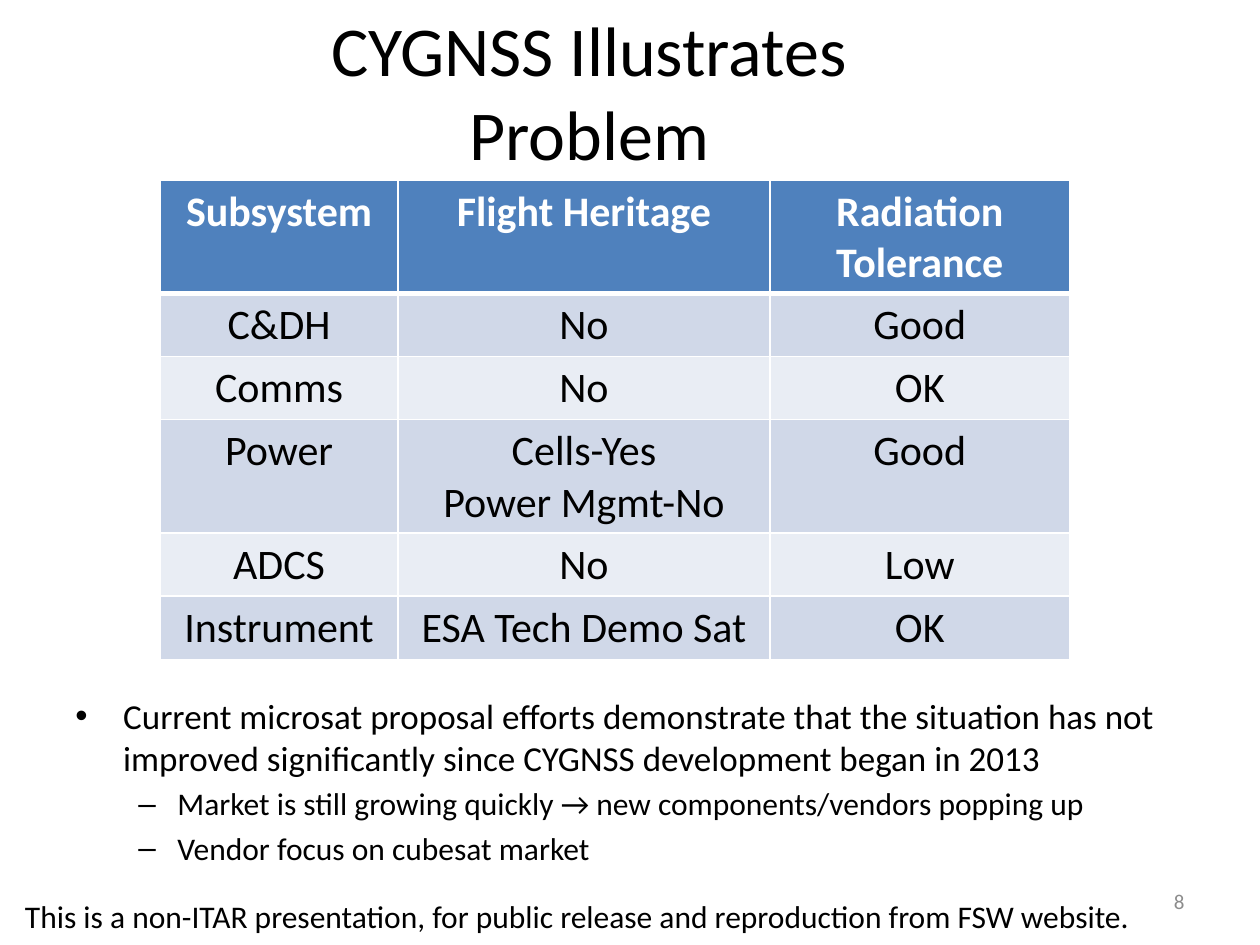
from lxml import etree
from pptx import Presentation
from pptx.dml.color import RGBColor
from pptx.enum.text import MSO_ANCHOR, PP_ALIGN
from pptx.oxml.ns import qn
from pptx.util import Inches, Pt

LEFT, CENTER, RIGHT = PP_ALIGN.LEFT, PP_ALIGN.CENTER, PP_ALIGN.RIGHT
TOP, MIDDLE = MSO_ANCHOR.TOP, MSO_ANCHOR.MIDDLE
BLACK, WHITE, GRAY = "000000", "FFFFFF", "8C8C8C"
HEADER_FILL, BAND_FILLS = "4F81BD", ("E9EDF4", "D0D8E8")

COLUMN_WIDTHS = (1.89, 2.95, 2.38)
ROW_HEIGHT = 0.41
ROWS = [
    ("Subsystem", "Flight Heritage", "Radiation Tolerance"),
    ("C&DH", "No", "Good"),
    ("Comms", "No", "OK"),
    ("Power", "Cells-Yes\nPower Mgmt-No", "Good"),
    ("ADCS", "No", "Low"),
    ("Instrument", "ESA Tech Demo Sat", "OK"),
]
BULLETS = [
    (0, "Current microsat proposal efforts demonstrate that the situation has not "
        "improved significantly since CYGNSS development began in 2013"),
    (1, "Market is still growing quickly → new components/vendors popping up"),
    (1, "Vendor focus on cubesat market"),
]
BULLET_LEVELS = [
    {"char": "•", "size": 20, "margin": 0.38, "hang": 0.38},
    {"char": "–", "size": 18, "margin": 0.81, "hang": 0.31},
]


def rgb(color):
    """Turn a hex string into a colour."""
    return RGBColor.from_string(color)


def write(p, text, size, color=BLACK, align=LEFT, bold=False):
    """Fill a paragraph with one formatted run."""
    p.alignment = align
    r = p.add_run()
    r.text = text
    font = {"name": "Calibri", "size": Pt(size), "bold": bold}
    for name, value in font.items():
        setattr(r.font, name, value)
    r.font.color.rgb = rgb(color)


def add_box(s, box, anchor=TOP):
    """Add a wrapping text box and return its text frame."""
    tf = s.shapes.add_textbox(*map(Inches, box)).text_frame
    tf.word_wrap = True
    tf.vertical_anchor = anchor
    return tf


def add_text(s, box, text, size, color=BLACK, align=LEFT, anchor=TOP):
    """Add a text box with a single paragraph."""
    write(add_box(s, box, anchor).paragraphs[0], text, size, color, align)


def add_bullets(s, box, items):
    """Add a two-level bulleted list."""
    tf = add_box(s, box)
    for i, (level, text) in enumerate(items):
        style = BULLET_LEVELS[level]
        p = tf.add_paragraph() if i else tf.paragraphs[0]
        p.level = level
        p.space_before = Pt(style["size"] * 0.2)
        write(p, text, style["size"])
        pPr = p._p.get_or_add_pPr()
        pPr.set("marL", str(Inches(style["margin"])))
        pPr.set("indent", str(-Inches(style["hang"])))
        etree.SubElement(pPr, qn("a:buFont"), typeface="Arial")
        etree.SubElement(pPr, qn("a:buChar"), char=style["char"])


def set_borders(cell, top, bottom):
    """Draw white borders around a cell, with widths in points."""
    tcPr = cell._tc.get_or_add_tcPr()
    for side, width in (("L", 1), ("R", 1), ("T", top), ("B", bottom)):
        ln = etree.SubElement(tcPr, qn(f"a:ln{side}"), w=str(Pt(width)))
        fill = etree.SubElement(ln, qn("a:solidFill"))
        etree.SubElement(fill, qn("a:srgbClr"), val=WHITE)


def add_subsystem_table(s, box, rows):
    """Add the banded table with a header row."""
    frame = s.shapes.add_table(len(rows), len(COLUMN_WIDTHS), *map(Inches, box))
    table = frame.table
    for column, width in zip(table.columns, COLUMN_WIDTHS):
        column.width = Inches(width)
    for i, texts in enumerate(rows):
        header = i == 0
        table.rows[i].height = Inches(ROW_HEIGHT)
        for j, text in enumerate(texts):
            cell = table.cell(i, j)
            set_borders(cell, 3 if i == 1 else 1, 3 if header else 1)
            cell.fill.solid()
            cell.fill.fore_color.rgb = rgb(HEADER_FILL if header else BAND_FILLS[i % 2])
            tf = cell.text_frame
            for k, line in enumerate(text.split("\n")):
                p = tf.add_paragraph() if k else tf.paragraphs[0]
                write(p, line, 24, WHITE if header else BLACK, CENTER, header)
    frame.height = Inches(box[3])


def main():
    """Build the slide and save it."""
    prs = Presentation()
    prs.slide_width, prs.slide_height = Inches(10), Inches(7.5)
    s = prs.slides.add_slide(prs.slide_layouts[6])
    add_text(s, (0.1, 7.07, 9.5, 0.4),
             "This is a non-ITAR presentation, for public release and "
             "reproduction from FSW website.", 18)
    add_text(s, (1.6, 0.18, 6.15, 1.07), "CYGNSS Illustrates Problem", 40,
             align=CENTER, anchor=MIDDLE)
    add_bullets(s, (0.5, 5.46, 9, 1.71), BULLETS)
    add_text(s, (7.17, 6.95, 2.33, 0.4), "8", 12, GRAY, RIGHT, MIDDLE)
    add_subsystem_table(s, (1.27, 1.43, 7.22, 3.8), ROWS)
    prs.save("out.pptx")


if __name__ == "__main__":
    main()
